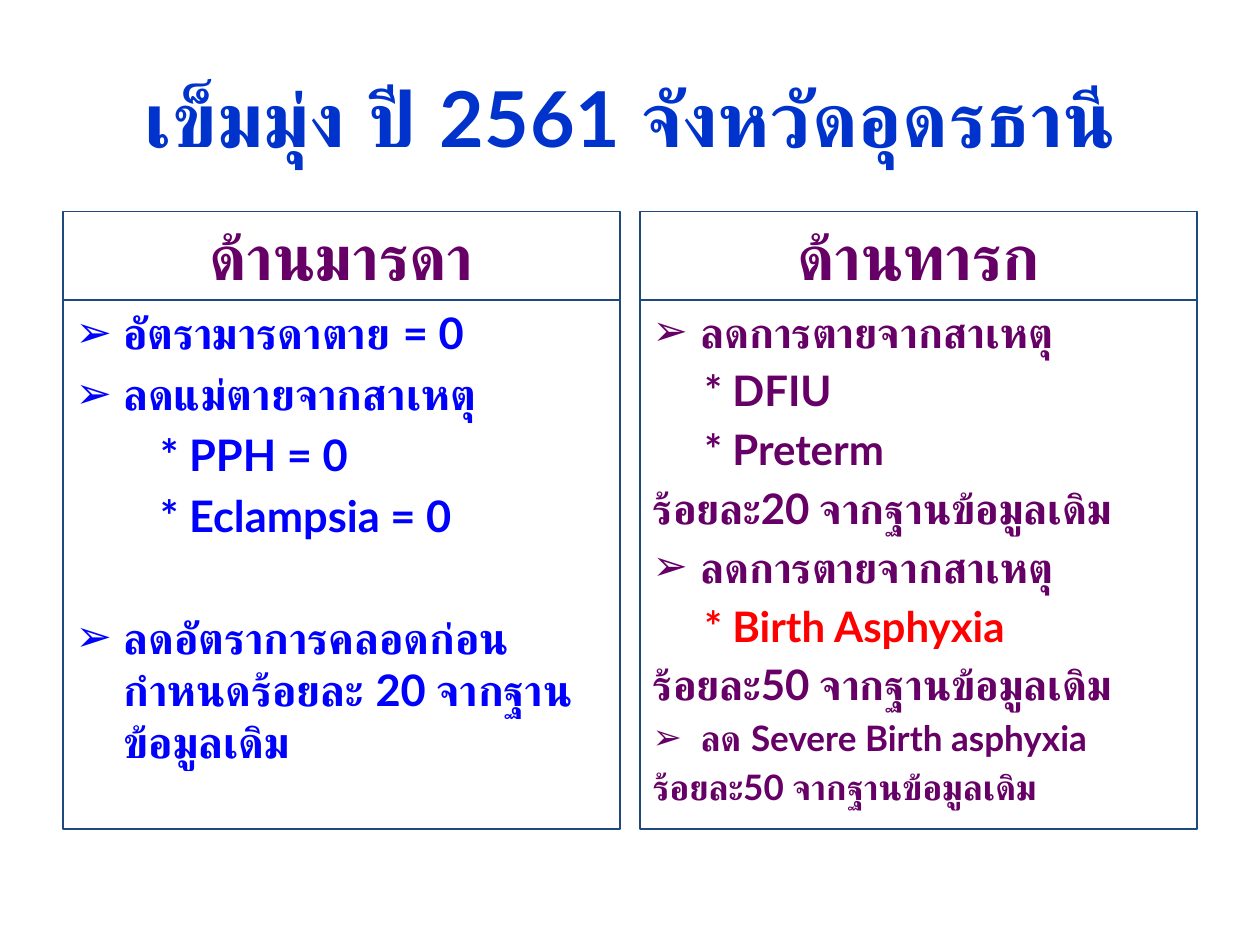
import pptx
import pptx.util
import pptx.dml.color
import pptx.enum.text
import pptx.oxml.ns
from lxml import etree

Inches, Pt = pptx.util.Inches, pptx.util.Pt
Align = pptx.enum.text.PP_ALIGN
Anchor = pptx.enum.text.MSO_ANCHOR

THEME = {
    "font": "Lato", "title": "0033CC", "head": "660066", "line": "1F497D",
    "mother": "0000FF", "child": "660066", "alert": "FF0000",
    "title_pt": 44, "head_pt": 36, "mother_pt": 24.8, "child_pt": 24, "small_pt": 20,
}

TITLE = "เข็มมุ่ง ปี 2561 จังหวัดอุดรธานี"
# Each item is (kind, text, format that differs from its column)
COLUMNS = [
    {"head": "ด้านมารดา", "tone": "mother", "sub": 0.67, "items": [
        ("bullet", "อัตรามารดาตาย = 0", {}),
        ("bullet", "ลดแม่ตายจากสาเหตุ", {}),
        ("sub", "* PPH = 0", {}),
        ("sub", "* Eclampsia = 0", {}),
        ("bullet", "ลดอัตราการคลอดก่อนกำหนดร้อยละ 20 จากฐานข้อมูลเดิม", {"before": 40}),
    ]},
    {"head": "ด้านทารก", "tone": "child", "sub": 0.41, "items": [
        ("bullet", "ลดการตายจากสาเหตุ", {}),
        ("sub", "* DFIU", {}),
        ("sub", "* Preterm", {}),
        ("plain", "ร้อยละ20 จากฐานข้อมูลเดิม", {}),
        ("bullet", "ลดการตายจากสาเหตุ", {}),
        ("sub", "* Birth Asphyxia", {"color": THEME["alert"]}),
        ("plain", "ร้อยละ50 จากฐานข้อมูลเดิม", {}),
        ("bullet", "ลด Severe Birth asphyxia", {"size": THEME["small_pt"]}),
        ("plain", "ร้อยละ50 จากฐานข้อมูลเดิม", {"size": THEME["small_pt"]}),
    ]},
]

LEFT, TOP, WIDE, GAP = 0.5, 1.68, 4.42, 0.16
HEAD_H, BODY_H, HANG = 0.7, 4.2, 0.38


def write(frame, text, size, color, align=Align.LEFT, before=None,
          margin=0, hang=0, bullet=None, track=None):
    """Add one paragraph; the gap before it is a fifth of its size by default."""
    first = not frame.text
    para = frame.paragraphs[0] if first else frame.add_paragraph()
    para.alignment = align
    if before is None:
        before = round(size * 0.2, 1)
    para.space_before = Pt(0 if first else before)
    props = para._p.get_or_add_pPr()
    props.set("marL", str(Inches(margin)))
    props.set("indent", str(Inches(-hang)))
    mark = etree.SubElement(props, pptx.oxml.ns.qn("a:buChar" if bullet else "a:buNone"))
    if bullet:
        mark.set("char", bullet)
    run = para.add_run()
    run.text = text
    font = run.font
    font.name, font.size, font.bold = THEME["font"], Pt(size), True
    font.color.rgb = pptx.dml.color.RGBColor.from_string(color)
    if track:
        run._r.get_or_add_rPr().set("spc", str(round(track * 100)))


def place(shape, left, top, width, height, anchor, framed=True):
    shape.left, shape.top = Inches(left), Inches(top)
    shape.width, shape.height = Inches(width), Inches(height)
    if framed:
        shape.line.color.rgb = pptx.dml.color.RGBColor.from_string(THEME["line"])
        shape.line.width = Pt(0.75)
    frame = shape.text_frame
    frame.word_wrap = True
    frame.auto_size = pptx.enum.text.MSO_AUTO_SIZE.NONE
    frame.vertical_anchor = anchor
    return frame


def main():
    deck = pptx.Presentation()
    deck.slide_width, deck.slide_height = Inches(10), Inches(7.5)
    slide = deck.slides.add_slide(deck.slide_layouts.get_by_name("Comparison"))
    holes = slide.placeholders

    frame = place(slide.shapes.title, LEFT, 0.3, 9, 1.25, Anchor.MIDDLE, framed=False)
    write(frame, TITLE, THEME["title_pt"], THEME["title"], align=Align.CENTER, track=0.5)

    for n, col in enumerate(COLUMNS):
        left = LEFT + n * (WIDE + GAP)
        frame = place(holes[2 * n + 1], left, TOP, WIDE, HEAD_H, Anchor.BOTTOM)
        write(frame, col["head"], THEME["head_pt"], THEME["head"], align=Align.CENTER)

        frame = place(holes[2 * n + 2], left, TOP + HEAD_H, WIDE, BODY_H, Anchor.TOP)
        kinds = {
            "bullet": {"margin": HANG, "hang": HANG, "bullet": "➢"},
            "sub": {"margin": col["sub"]},
            "plain": {},
        }
        base = {"size": THEME[col["tone"] + "_pt"], "color": THEME[col["tone"]]}
        for kind, text, extra in col["items"]:
            write(frame, text, **{**base, **kinds[kind], **extra})

    deck.save("out.pptx")


if __name__ == "__main__":
    main()
